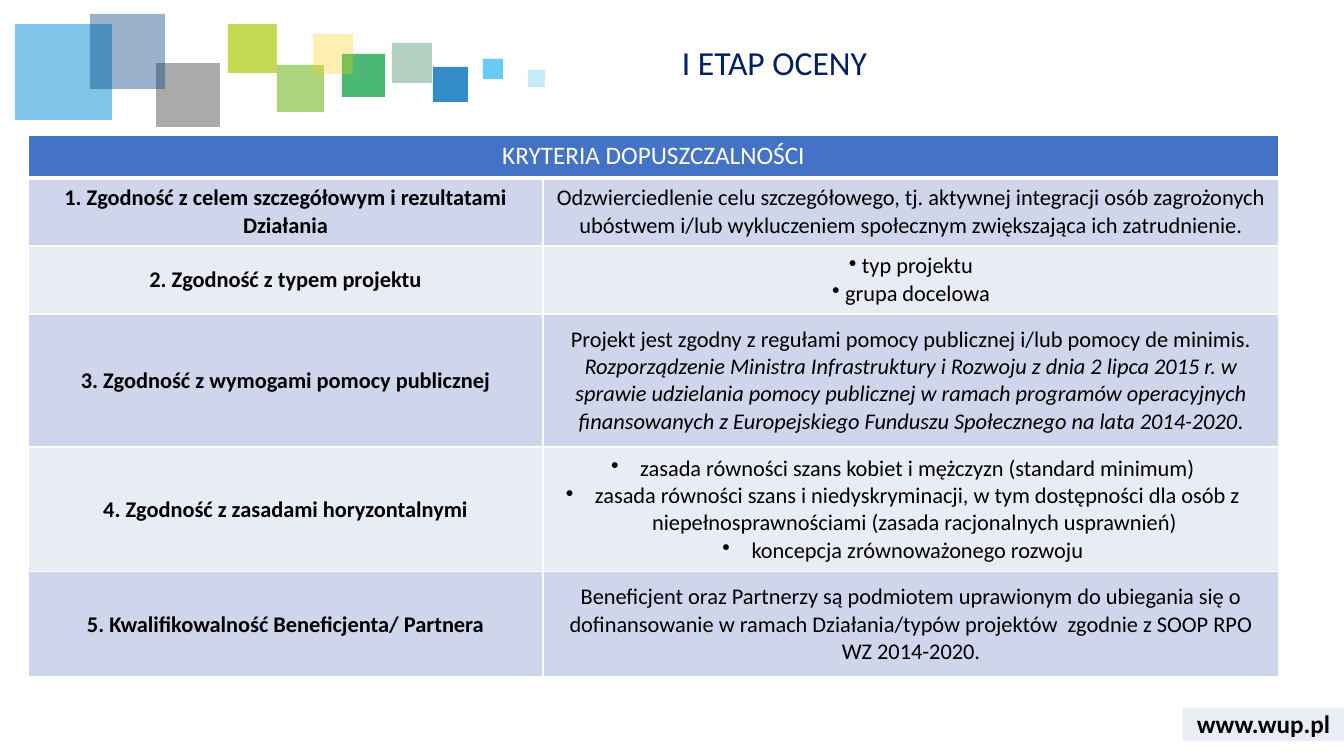
import pptx
import pptx.util
import pptx.dml.color
import pptx.enum.shapes
import pptx.enum.text
import pptx.oxml
import pptx.oxml.ns

PX = 914400 / 100.8
THEME = {
    "font": "Calibri",
    "black": "000000", "white": "FFFFFF", "navy": "002060",
    "head": "4472C4", "odd": "CFD5EA", "even": "E9EBF5", "foot": "2F5597",
    "title": 24, "large": 18, "body": 16,
}
ALIGN = pptx.enum.text.PP_ALIGN
MIDDLE = pptx.enum.text.MSO_ANCHOR.MIDDLE
qn = pptx.oxml.ns.qn


def px(*vals):
    return [pptx.util.Emu(round(v * PX)) for v in vals]


def write(frame, lines, size=THEME["body"], color=THEME["black"], bold=False,
          align=ALIGN.CENTER, space=None, bullet=None):
    """Each line is a list of runs; odd runs are set in italics."""
    frame.word_wrap = True
    for i, runs in enumerate(lines):
        para = frame.add_paragraph() if i else frame.paragraphs[0]
        para.alignment = align
        if bullet:
            left, hang = px(*bullet)
            props = para._p.get_or_add_pPr()
            props.set("marL", str(left))
            props.set("indent", str(-hang))
            mark = props.makeelement(qn("a:buChar"), {"char": "•"})
            props.append(mark)
        if space:
            para.line_spacing = space
        for j, text in enumerate(runs):
            run = para.add_run()
            run.text = text
            font = run.font
            font.name = THEME["font"]
            font.size = pptx.util.Pt(size)
            font.bold = bold
            font.italic = j % 2 == 1
            font.color.rgb = pptx.dml.color.RGBColor.from_string(color)


deck = pptx.Presentation()
deck.slide_width, deck.slide_height = px(1344, 756)
slide = deck.slides.add_slide(deck.slide_layouts[6])
shapes = slide.shapes

# Translucent squares and the footer band: left, top, width, height, colour, opacity
squares = [
    (392, 43, 40, 40, "006138", 30),
    (433, 67, 35, 35, "006EB9", 80),
    (342, 54, 43, 43, "009A3C", 70),
    (15, 24, 97, 96, "028BD3", 50),
    (277, 65, 47, 47, "75B82A", 60),
    (156, 63, 64, 64, "575757", 50),
    (90, 14, 75, 75, "003D7C", 40),
    (483, 59, 20, 20, "40C0F1", 80),
    (228, 24, 49, 49, "AFCA0B", 70),
    (313, 34, 40, 40, "FED000", 30),
    (528, 70, 17, 17, "40C0F1", 30),
    (1183, 708, 161, 33, THEME["foot"], 10),
]
for *place, color, alpha in squares:
    square = shapes.add_shape(pptx.enum.shapes.MSO_SHAPE.RECTANGLE, *px(*place))
    square.shadow.inherit = False
    square.line.fill.background()
    square.fill.solid()
    square.fill.fore_color.rgb = pptx.dml.color.RGBColor.from_string(color)
    tint = square._element.spPr.find(".//" + qn("a:srgbClr"))
    tint.append(tint.makeelement(qn("a:alpha"), {"val": str(alpha * 1000)}))

# Footer address
foot = shapes.add_textbox(*px(1183, 703, 161, 40)).text_frame
foot.vertical_anchor = MIDDLE
write(foot, [["www.wup.pl"]], size=THEME["large"], bold=True)

# Title
title = shapes.add_textbox(*px(672, 42, 641, 55)).text_frame
write(title, [["I ETAP OCENY"]], size=THEME["title"], color=THEME["navy"],
      align=ALIGN.LEFT, space=0.9)

# Criteria: name, lines of the description, bullet indent and hang
rules = [
    ("1. Zgodność z celem szczegółowym i rezultatami Działania",
     [["Odzwierciedlenie celu szczegółowego, tj. aktywnej integracji osób zagrożonych "
       "ubóstwem i/lub wykluczeniem społecznym zwiększająca ich zatrudnienie."]], None),
    ("2. Zgodność z typem projektu",
     [[" typ projektu"], [" grupa docelowa"]], (2, 2)),
    ("3. Zgodność z wymogami pomocy publicznej",
     [["Projekt jest zgodny z regułami pomocy publicznej i/lub pomocy de minimis. ",
       "Rozporządzenie Ministra Infrastruktury i Rozwoju z dnia 2 lipca 2015 r. "
       "w sprawie udzielania pomocy publicznej w ramach programów operacyjnych "
       "finansowanych z Europejskiego Funduszu Społecznego na lata 2014-2020",
       "."]], None),
    ("4. Zgodność z zasadami horyzontalnymi",
     [[" zasada równości szans kobiet i mężczyzn (standard minimum)"],
      [" zasada równości szans i niedyskryminacji, w tym dostępności dla osób "
       "z niepełnosprawnościami (zasada racjonalnych usprawnień)"],
      [" koncepcja zrównoważonego rozwoju"]], (7, 24)),
    ("5. Kwalifikowalność Beneficjenta/ Partnera",
     [["Beneficjent oraz Partnerzy są podmiotem uprawionym do ubiegania się "
       "o dofinansowanie w ramach Działania/typów projektów  zgodnie z SOOP "
       "RPO WZ 2014-2020."]], None),
]
heights = [43, 68, 68, 133, 125, 105]
table = shapes.add_table(len(heights), 2, *px(28, 135, 1251, sum(heights))).table
for col, width in zip(table.columns, px(515, 736)):
    col.width = width
for row, height in zip(table.rows, px(*heights)):
    row.height = height

# Cell fills and white borders
for r in range(len(heights)):
    shade = THEME["head"] if r == 0 else THEME["odd" if r % 2 else "even"]
    for c in range(2):
        cell = table.cell(r, c)
        cell.vertical_anchor = MIDDLE if r else pptx.enum.text.MSO_ANCHOR.TOP
        props = cell._tc.get_or_add_tcPr()
        for side in "LRTB":
            thick = 3 if (r, side) in ((0, "B"), (1, "T")) else 1
            props.append(pptx.oxml.parse_xml(
                f'<a:ln{side} {pptx.oxml.ns.nsdecls("a")} w="{thick * 12700}">'
                f'<a:solidFill><a:srgbClr val="{THEME["white"]}"/></a:solidFill></a:ln{side}>'))
        cell.fill.solid()
        cell.fill.fore_color.rgb = pptx.dml.color.RGBColor.from_string(shade)

# Table text
table.cell(0, 0).merge(table.cell(0, 1))
write(table.cell(0, 0).text_frame, [["KRYTERIA DOPUSZCZALNOŚCI"]],
      size=THEME["large"], color=THEME["white"])
for r, (name, lines, bullet) in enumerate(rules, 1):
    write(table.cell(r, 0).text_frame, [[name]], bold=True)
    write(table.cell(r, 1).text_frame, lines, bullet=bullet)

deck.save("out.pptx")
